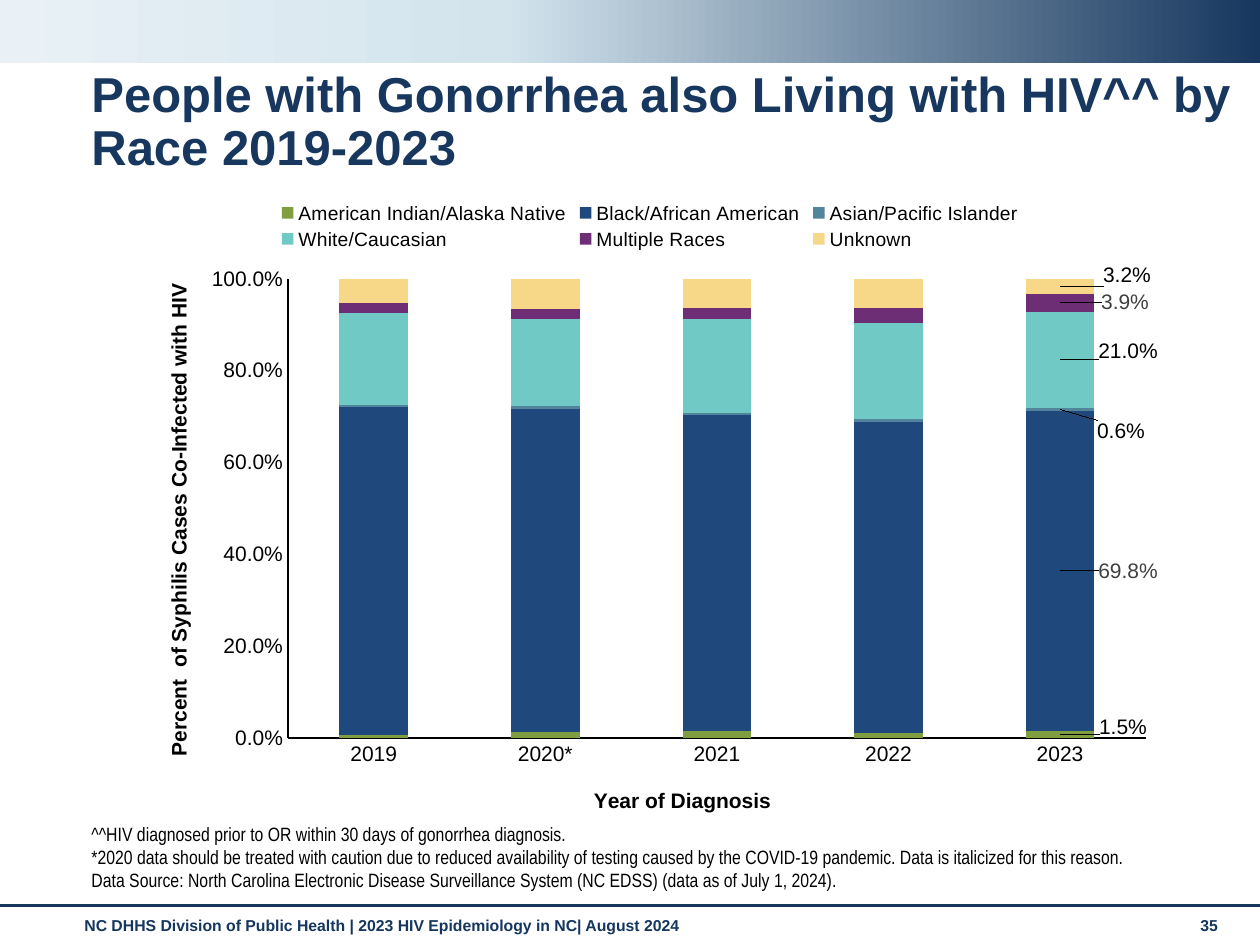
from copy import deepcopy

from lxml.etree import SubElement
from pptx import Presentation
from pptx.chart.data import CategoryChartData
from pptx.dml.color import RGBColor
from pptx.enum.chart import XL_CHART_TYPE as CHART, XL_LEGEND_POSITION as LEGEND
from pptx.enum.chart import XL_TICK_MARK as TICK
from pptx.enum.shapes import MSO_CONNECTOR, MSO_SHAPE
from pptx.enum.text import MSO_ANCHOR
from pptx.oxml.ns import qn
from pptx.util import Pt

NAVY = RGBColor(0x17, 0x37, 0x5E)
FOOTER_NAVY = RGBColor(0x15, 0x36, 0x5E)
ICE = RGBColor(0xD3, 0xE4, 0xED)
PALE = RGBColor(0xE9, 0xF1, 0xF6)
BLACK = RGBColor(0, 0, 0)
GREY = RGBColor(0x40, 0x40, 0x40)
GREEN = RGBColor(0x7F, 0x9E, 0x3F)
BLUE = RGBColor(0x1F, 0x49, 0x7D)
STEEL = RGBColor(0x52, 0x84, 0x9C)
TEAL = RGBColor(0x71, 0xC9, 0xC5)
PURPLE = RGBColor(0x6D, 0x2E, 0x75)
YELLOW = RGBColor(0xF6, 0xD8, 0x88)

CHART_BOX = (134, 186, 1034, 648)
YEARS = ["2019", "2020*", "2021", "2022", "2023"]
# name, shares, bar colour, label colour, label shift in px
RACES = [
    ("American Indian/Alaska Native", (0.007, 0.012, 0.014, 0.01, 0.015), GREEN, BLACK, (63, -7)),
    ("Black/African American", (0.715, 0.705, 0.689, 0.678, 0.698), BLUE, GREY, (68, 0)),
    ("Asian/Pacific Islander", (0.004, 0.006, 0.005, 0.007, 0.006), STEEL, BLACK, (61, 22)),
    ("White/Caucasian", (0.199, 0.19, 0.205, 0.209, 0.21), TEAL, BLACK, (68, -8)),
    ("Multiple Races", (0.023, 0.022, 0.023, 0.033, 0.039), PURPLE, GREY, (65, 0)),
    ("Unknown", (0.052, 0.066, 0.065, 0.064, 0.032), YELLOW, BLACK, (67, -11)),
]
NOTES = [
    "^^HIV diagnosed prior to OR within 30 days of gonorrhea diagnosis.",
    "*2020 data should be treated with caution due to reduced availability of testing "
    "caused by the COVID-19 pandemic. Data is italicized for this reason.",
    "Data Source: North Carolina Electronic Disease Surveillance System (NC EDSS) "
    "(data as of July 1, 2024).",
]


def px(n):
    return round(n * 914400 / 126)


def apply(obj, **formats):
    for name, value in formats.items():
        setattr(obj, name, value)


def style_font(font, size, color=BLACK, bold=False, name="Arial"):
    apply(font, size=Pt(size), bold=bold, name=name)
    font.color.rgb = color


def add_text(slide, box, lines, size, color, bold=True, name="Arial",
             anchor=MSO_ANCHOR.TOP, spacing=None):
    tf = slide.shapes.add_textbox(*map(px, box)).text_frame
    apply(tf, word_wrap=True, vertical_anchor=anchor)
    tf.text = "\n".join(lines)
    for p in tf.paragraphs:
        p.line_spacing = spacing
        style_font(p.runs[0].font, size, color, bold, name)


def add_banner(slide):
    sp = slide.shapes.add_shape(MSO_SHAPE.RECTANGLE, 0, 0, px(1260), px(63))
    sp.shadow.inherit = False
    sp.line.fill.background()
    sp.fill.gradient()
    sp.fill.gradient_angle = 180
    stops = sp._element.spPr.find(".//" + qn("a:gsLst"))
    stops.append(deepcopy(stops[-1]))
    for stop, position, color in zip(sp.fill.gradient_stops, (0, 0.6, 1), (NAVY, ICE, PALE)):
        stop.position = position
        stop.color.rgb = color


def add_rule(slide, y):
    line = slide.shapes.add_connector(MSO_CONNECTOR.STRAIGHT, 0, px(y), px(1260), px(y))
    line.line.color.rgb = NAVY
    line.line.width = Pt(1.75)
    SubElement(line._element.spPr, qn("a:effectLst"))


def set_layout(parent, index, **values):
    """Give a chart part a manual layout, as the child at the given index."""
    old = parent.find(qn("c:layout"))
    if old is not None:
        parent.remove(old)
    layout = SubElement(parent, qn("c:layout"))
    manual = SubElement(layout, qn("c:manualLayout"))
    for name, value in values.items():
        SubElement(manual, qn("c:" + name)).set("val", str(value))
    parent.insert(index, layout)


def edge_layout(x, y, w=None, h=None):
    """Turn slide pixels into fractions of the chart."""
    left, top, width, height = CHART_BOX
    values = dict(xMode="edge", yMode="edge",
                  x=(x - left) / width, y=(y - top) / height)
    if w:
        values.update(w=w / width, h=h / height)
    return values


def style_axis(axis, title, x, y, rotation):
    apply(axis, has_major_gridlines=False,
          major_tick_mark=TICK.NONE, minor_tick_mark=TICK.NONE)
    style_font(axis.tick_labels.font, 12)
    axis.format.line.color.rgb = BLACK
    axis.format.line.width = Pt(0.75)
    tf = axis.axis_title.text_frame
    tf.text = title
    style_font(tf.paragraphs[0].runs[0].font, 12, bold=True)
    tf._txBody.bodyPr.set("rot", str(rotation * 60000))
    set_layout(axis.axis_title._element, 1, **edge_layout(x, y))


def style_series(series, color, label_color, shift):
    """Colour the bars and label only the last year, beside its bar."""
    series.format.fill.solid()
    series.format.fill.fore_color.rgb = color
    series.data_labels.show_value = False
    label = series.points[len(YEARS) - 1].data_label
    style_font(label.font, 12, label_color)
    dx, dy = shift
    set_layout(label._dLbl, 1, x=dx / CHART_BOX[2], y=dy / CHART_BOX[3])


def add_race_chart(slide):
    data = CategoryChartData(number_format="0.0%")
    data.categories = YEARS
    for name, shares, *_ in RACES:
        data.add_series(name, shares)
    chart = slide.shapes.add_chart(CHART.COLUMN_STACKED, *map(px, CHART_BOX), data).chart
    apply(chart, has_title=False, has_legend=True)
    style_font(chart.font, 10)
    plot = chart.plots[0]
    apply(plot, gap_width=150, overlap=100, vary_by_categories=False)
    for series, (_, _, *style) in zip(plot.series, RACES):
        style_series(series, *style)

    apply(chart.legend, position=LEGEND.TOP, include_in_layout=False)
    style_font(chart.legend.font, 11)
    set_layout(chart.legend._element, 1, **edge_layout(275, 198, 750, 56))
    set_layout(chart._chartSpace.chart.plotArea, 0, layoutTarget="inner",
               **edge_layout(288, 279, 858, 459))

    style_axis(chart.category_axis, "Year of Diagnosis", 590, 784, 0)
    style_axis(chart.value_axis, "Percent  of Syphilis Cases Co-Infected with HIV",
               162, 280, -90)
    apply(chart.value_axis, minimum_scale=0, maximum_scale=1, major_unit=0.2)
    apply(chart.value_axis.tick_labels, number_format="0.0%", number_format_is_linked=False)


def main():
    prs = Presentation()
    apply(prs, slide_width=px(1260), slide_height=px(945))
    slide = prs.slides.add_slide(prs.slide_layouts[6])
    add_text(slide, (72, 910, 1101, 37),
             ["NC DHHS Division of Public Health | 2023 HIV Epidemiology in NC| August 2024"],
             9, FOOTER_NAVY)
    add_text(slide, (1188, 910, 55, 38), ["35"], 9, FOOTER_NAVY)
    add_banner(slide)
    add_rule(slide, 906)
    add_text(slide, (79, 64, 1164, 76),
             ["People with Gonorrhea also Living with HIV^^ by Race 2019-2023"],
             28, NAVY, spacing=0.9)
    add_text(slide, (79, 819, 1101, 79), NOTES, 11, BLACK, bold=False,
             name="Arial Narrow", anchor=MSO_ANCHOR.BOTTOM)
    add_race_chart(slide)
    prs.save("out.pptx")


if __name__ == "__main__":
    main()
